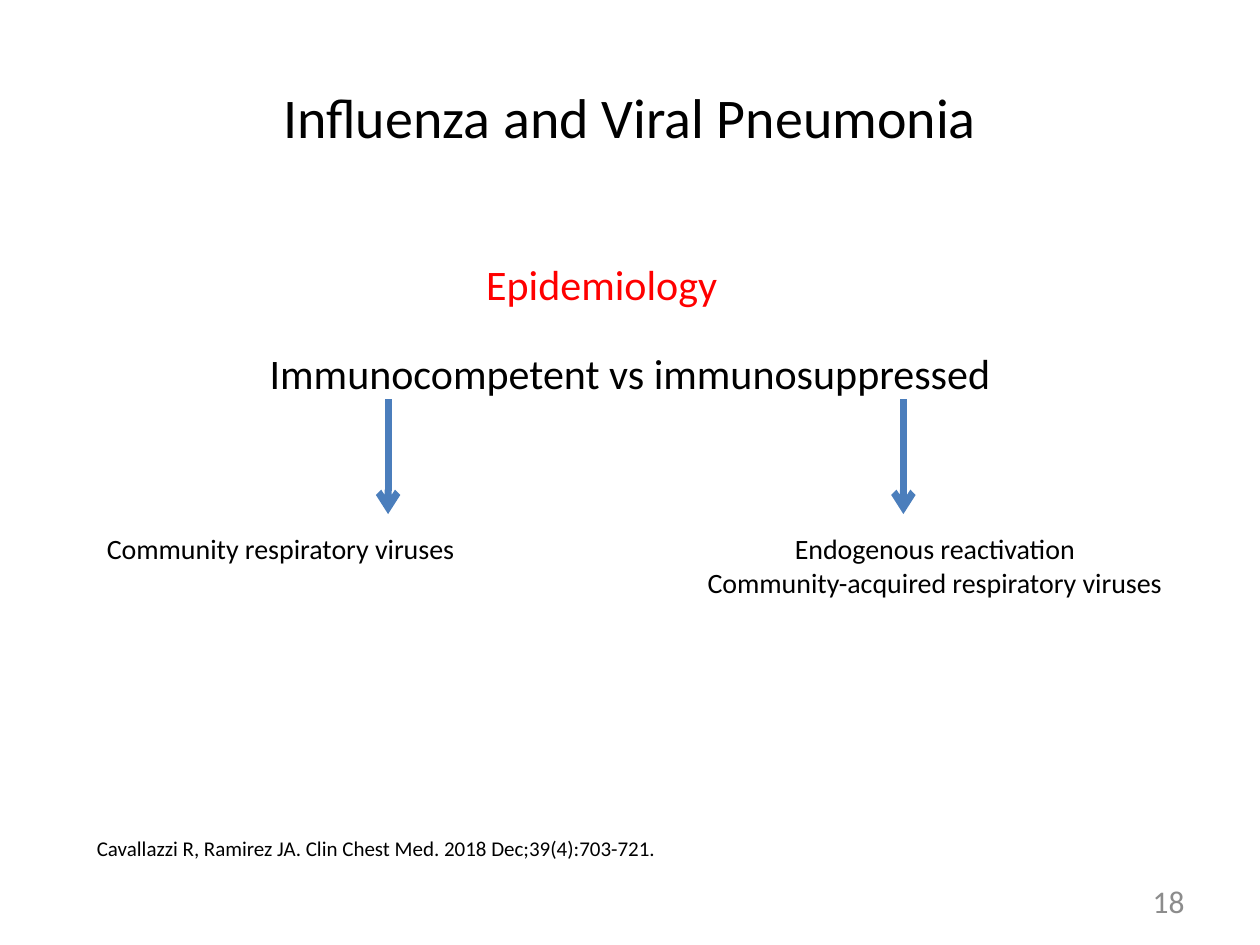
from dataclasses import dataclass

from lxml.etree import SubElement
from pptx import Presentation
from pptx.dml.color import RGBColor
from pptx.enum.shapes import MSO_CONNECTOR as Connector
from pptx.enum.text import MSO_ANCHOR as Anchor, PP_ALIGN as Align
from pptx.oxml.ns import qn
from pptx.util import Inches, Pt


@dataclass(frozen=True)
class Theme:
    """Hold the colours, font and type sizes of the slide."""
    font: str = "Calibri"
    black: RGBColor = RGBColor(0x00, 0x00, 0x00)
    red: RGBColor = RGBColor(0xFF, 0x00, 0x00)
    grey: RGBColor = RGBColor(0x8C, 0x8C, 0x8C)
    blue: RGBColor = RGBColor(0x4B, 0x7E, 0xBC)
    title: int = 32
    heading: int = 24
    page: int = 18
    detail: int = 16
    citation: int = 12
    arrow: int = 4


THEME = Theme()


def add_text(slide, box, lines, size, color=THEME.black, align=Align.CENTER,
             anchor=Anchor.TOP, wrap=True):
    """Place lines of text in a box given in inches."""
    shape = slide.shapes.add_textbox(*map(Inches, box))
    text_frame = shape.text_frame
    text_frame.word_wrap = wrap
    text_frame.vertical_anchor = anchor
    text_frame.text = "\n".join(lines)
    for paragraph in text_frame.paragraphs:
        paragraph.alignment = align
        for run in paragraph.runs:
            run.font.name = THEME.font
            run.font.size = Pt(size)
            run.font.color.rgb = color


def add_down_arrow(slide, x, top, height):
    """Draw a vertical arrow pointing down."""
    arrow = slide.shapes.add_connector(
        Connector.STRAIGHT, Inches(x), Inches(top), Inches(x), Inches(top + height))
    arrow.line.color.rgb = THEME.blue
    arrow.line.width = Pt(THEME.arrow)
    SubElement(arrow.line._get_or_add_ln(), qn("a:tailEnd"), type="arrow")
    SubElement(arrow._element.spPr, qn("a:effectLst"))


def add_header(slide, box):
    """Place the title and the red section name below it."""
    left, top, width, height = box
    add_text(slide, (left, top, width, 1.25), ["Influenza and Viral Pneumonia"],
             THEME.title, anchor=Anchor.MIDDLE)
    add_text(slide, (left + 3.25, top + height - 0.5, 2.05, 0.5), ["Epidemiology"],
             THEME.heading, THEME.red, wrap=False)


def add_comparison(slide, box):
    """Place the compared groups with an arrow to the causes of each."""
    left, top, width, height = box
    add_text(slide, (left, top, width, 0.5), ["Immunocompetent vs immunosuppressed"],
             THEME.heading)
    branches = [
        (2.58, 0.25, Align.LEFT, ["Community respiratory viruses"]),
        (6.67, 4.67, Align.CENTER,
         ["Endogenous reactivation", "Community-acquired respiratory viruses"]),
    ]
    causes_top = 1.46
    for arrow_x, text_x, align, lines in branches:
        add_down_arrow(slide, left + arrow_x, top + 0.46, 0.91)
        add_text(slide, (left + text_x, top + causes_top, 4.5, height - causes_top),
                 lines, THEME.detail, align=align)


def add_footer(slide, box):
    """Place the citation at the left and the page number at the right."""
    left, top, width, height = box
    add_text(slide, (left, top, 4.69, 0.3),
             ["Cavallazzi R, Ramirez JA. Clin Chest Med. 2018 Dec;39(4):703-721."],
             THEME.citation, align=Align.LEFT, wrap=False)
    add_text(slide, (left + width - 2.33, top + height - 0.4, 2.33, 0.4), ["18"],
             THEME.page, THEME.grey, Align.RIGHT, Anchor.MIDDLE)


def main():
    """Build and save the slide."""
    presentation = Presentation()
    presentation.slide_width, presentation.slide_height = Inches(10), Inches(7.5)
    slide = presentation.slides.add_slide(presentation.slide_layouts[6])
    add_header(slide, (0.5, 0.3, 9, 2.2))
    add_comparison(slide, (0.5, 2.71, 9, 2.91))
    add_footer(slide, (0.67, 6.58, 8.83, 0.77))
    presentation.save("out.pptx")


if __name__ == "__main__":
    main()
